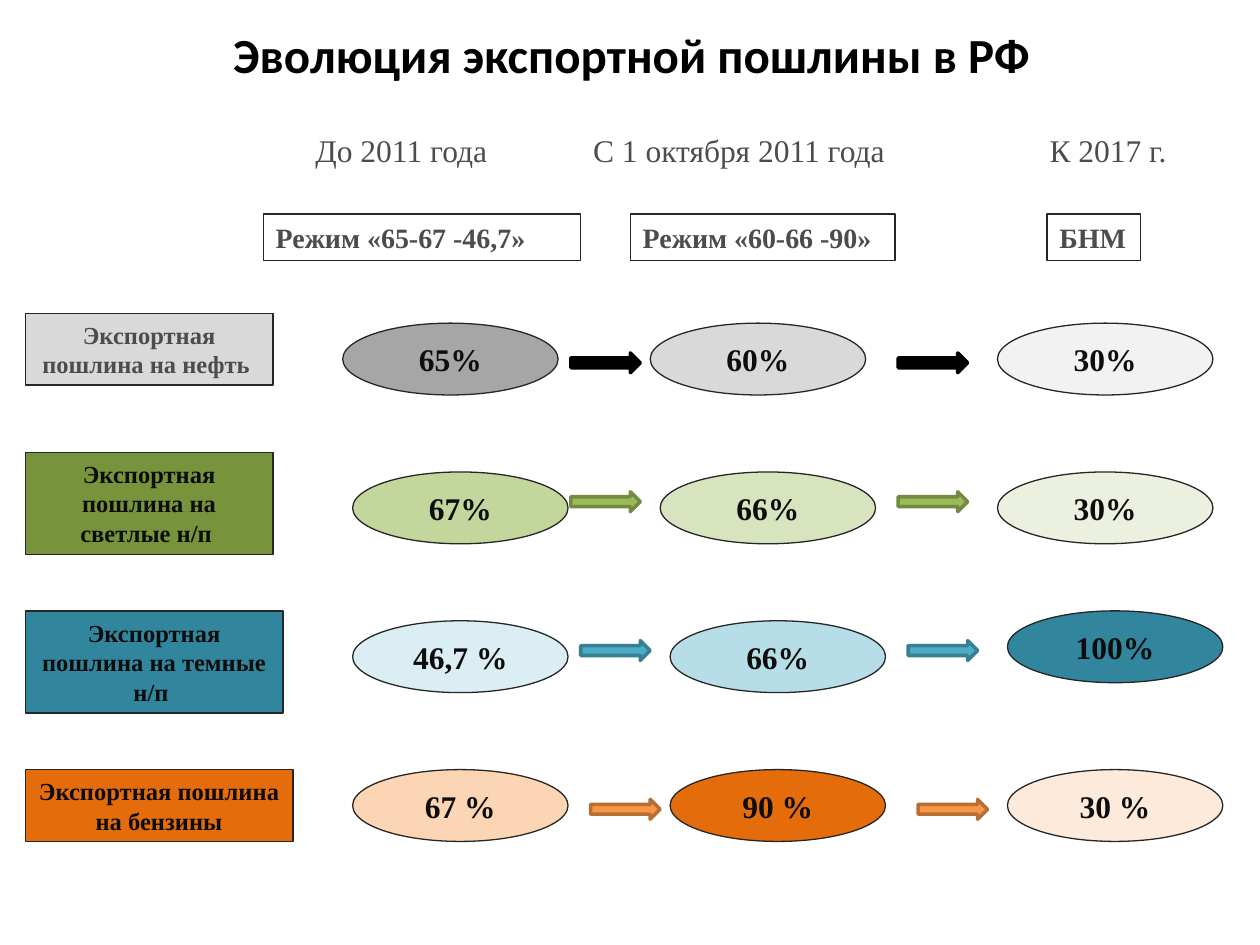
from dataclasses import dataclass

from pptx import Presentation
from pptx.dml.color import RGBColor
from pptx.enum.shapes import MSO_SHAPE
from pptx.enum.text import MSO_ANCHOR, MSO_AUTO_SIZE, PP_ALIGN
from pptx.util import Inches, Mm, Pt

RECT, OVAL, ARROW = MSO_SHAPE.RECTANGLE, MSO_SHAPE.OVAL, MSO_SHAPE.RIGHT_ARROW
LEFT, CENTER = PP_ALIGN.LEFT, PP_ALIGN.CENTER
MIDDLE, GROW = MSO_ANCHOR.MIDDLE, MSO_AUTO_SIZE.SHAPE_TO_FIT_TEXT

# Grid: square cells of 2 mm counted from the origin
CELL = Mm(2)
ORIGIN_X, ORIGIN_Y = Inches(0.2), Inches(0.99)
MODE_ROW, FIRST_RATE_ROW, RATE_PITCH = 9, 20, 15

PERIOD_HEIGHT, MODE_HEIGHT = Inches(0.4), Inches(0.37)
RATE_SIZE = Inches(1.71), Inches(0.57)
ARROW_SIZE = 7 * CELL, 2 * CELL
ARROW_STEP = 33

SERIF = "Times New Roman"
GREY, INK, OUTLINE = "4B4C4E", "0D0D0D", "262626"


@dataclass(frozen=True)
class Period:
    title: str
    title_col: int
    title_width: float
    mode: str
    mode_col: int
    mode_width: float
    mode_wraps: bool = False


@dataclass(frozen=True)
class Duty:
    label: str
    label_shift: int  # rows relative to the rates
    label_cols: int
    label_height: float
    label_fill: str
    label_color: str
    rates: tuple[tuple[str, int, str], ...]  # text, column, fill
    arrow_col: int
    arrow_shift: int
    arrow_fill: str
    arrow_line: str
    last_rate_shift: int = 0


PERIODS = (
    Period("До 2011 года", 28, 1.58, "Режим «65-67 -46,7»", 24, 2.52, True),
    Period("С 1 октября 2011 года", 56, 2.54, "Режим «60-66 -90»", 61, 2.1),
    Period("К 2017 г.", 102, 1.14, "БНМ", 103, 0.74),
)
DUTIES = (
    Duty("Экспортная пошлина на нефть ", -1, 25, 0.57, "D9D9D9", GREY,
         (("65%", 32, "A6A6A6"), ("60%", 63, "D9D9D9"), ("30%", 98, "F2F2F2")),
         55, 3, "000000", "000000"),
    Duty("Экспортная пошлина на светлые н/п ", -2, 25, 0.81, "77933C", INK,
         (("67%", 33, "C3D69B"), ("66%", 64, "D7E4BD"), ("30%", 98, "EBF1DE")),
         55, 2, "9BBB59", "738A42"),
    Duty("Экспортная пошлина на темные н/п ", -1, 26, 0.81, "31859C", INK,
         (("46,7 %", 33, "DBEEF4"), ("66%", 65, "B7DEE8"), ("100%", 99, "31859C")),
         56, 2, "4BACC6", "377F92", last_rate_shift=-1),
    Duty("Экспортная пошлина на бензины", 0, 27, 0.57, "E46C0A", INK,
         (("67 %", 33, "FCD5B5"), ("90 %", 65, "E46C0A"), ("30 %", 99, "FDEADA")),
         57, 3, "F79646", "B76F34"),
)


def rgb(value: str) -> RGBColor:
    return RGBColor.from_string(value)


def at_cell(col: int, row: int) -> tuple[int, int]:
    return ORIGIN_X + col * CELL, ORIGIN_Y + row * CELL


def write(shape, text: str, *, size: float, color: str, font: str = SERIF,
          bold: bool = True, align=CENTER, wrap: bool = True) -> None:
    frame = shape.text_frame
    frame.word_wrap = wrap
    frame.auto_size = GROW
    frame.vertical_anchor = MIDDLE
    paragraph = frame.paragraphs[0]
    paragraph.alignment = align
    run = paragraph.add_run()
    run.text = text
    run.font.name, run.font.size, run.font.bold = font, Pt(size), bold
    run.font.color.rgb = rgb(color)


def add_figure(slide, kind, position: tuple[int, int], size: tuple[int, int],
               fill: str | None = None, line: str = OUTLINE,
               line_width: float = 0.75):
    figure = slide.shapes.add_shape(kind, *position, *size)
    figure.shadow.inherit = False
    if fill:
        figure.fill.solid()
        figure.fill.fore_color.rgb = rgb(fill)
    else:
        figure.fill.background()
    figure.line.color.rgb = rgb(line)
    figure.line.width = Pt(line_width)
    return figure


def draw_period(slide, period: Period) -> None:
    heading = slide.shapes.add_textbox(
        *at_cell(period.title_col, 0), Inches(period.title_width), PERIOD_HEIGHT)
    write(heading, period.title, size=18, color=GREY, bold=False, align=LEFT,
          wrap=False)
    mode = add_figure(slide, RECT, at_cell(period.mode_col, MODE_ROW),
                      (Inches(period.mode_width), MODE_HEIGHT))
    write(mode, period.mode, size=16, color=GREY, align=LEFT,
          wrap=period.mode_wraps)


def draw_duty(slide, duty: Duty, row: int) -> None:
    label = add_figure(slide, RECT, at_cell(0, row + duty.label_shift),
                       (duty.label_cols * CELL, Inches(duty.label_height)),
                       duty.label_fill)
    write(label, duty.label, size=14, color=duty.label_color)

    # Rates, the last of which may sit higher
    shifts = (0, 0, duty.last_rate_shift)
    for (text, col, fill), shift in zip(duty.rates, shifts):
        rate = add_figure(slide, OVAL, at_cell(col, row + shift), RATE_SIZE, fill)
        write(rate, text, size=18, color=INK)

    # Arrows between the periods
    for step in range(len(duty.rates) - 1):
        col = duty.arrow_col + step * ARROW_STEP
        add_figure(slide, ARROW, at_cell(col, row + duty.arrow_shift), ARROW_SIZE,
                   duty.arrow_fill, duty.arrow_line, 2)


def main() -> None:
    deck = Presentation()
    deck.slide_width, deck.slide_height = Inches(10), Inches(7.5)
    slide = deck.slides.add_slide(deck.slide_layouts[6])

    # Title
    title = slide.shapes.add_textbox(Inches(0.51), 0, Inches(9), Inches(0.86))
    write(title, "Эволюция экспортной пошлины в РФ", size=28, color="000000",
          font="Calibri")
    title.text_frame.auto_size = MSO_AUTO_SIZE.NONE

    # Period headings, then one row per duty
    for period in PERIODS:
        draw_period(slide, period)
    for index, duty in enumerate(DUTIES):
        draw_duty(slide, duty, FIRST_RATE_ROW + index * RATE_PITCH)

    deck.save("out.pptx")


if __name__ == "__main__":
    main()
